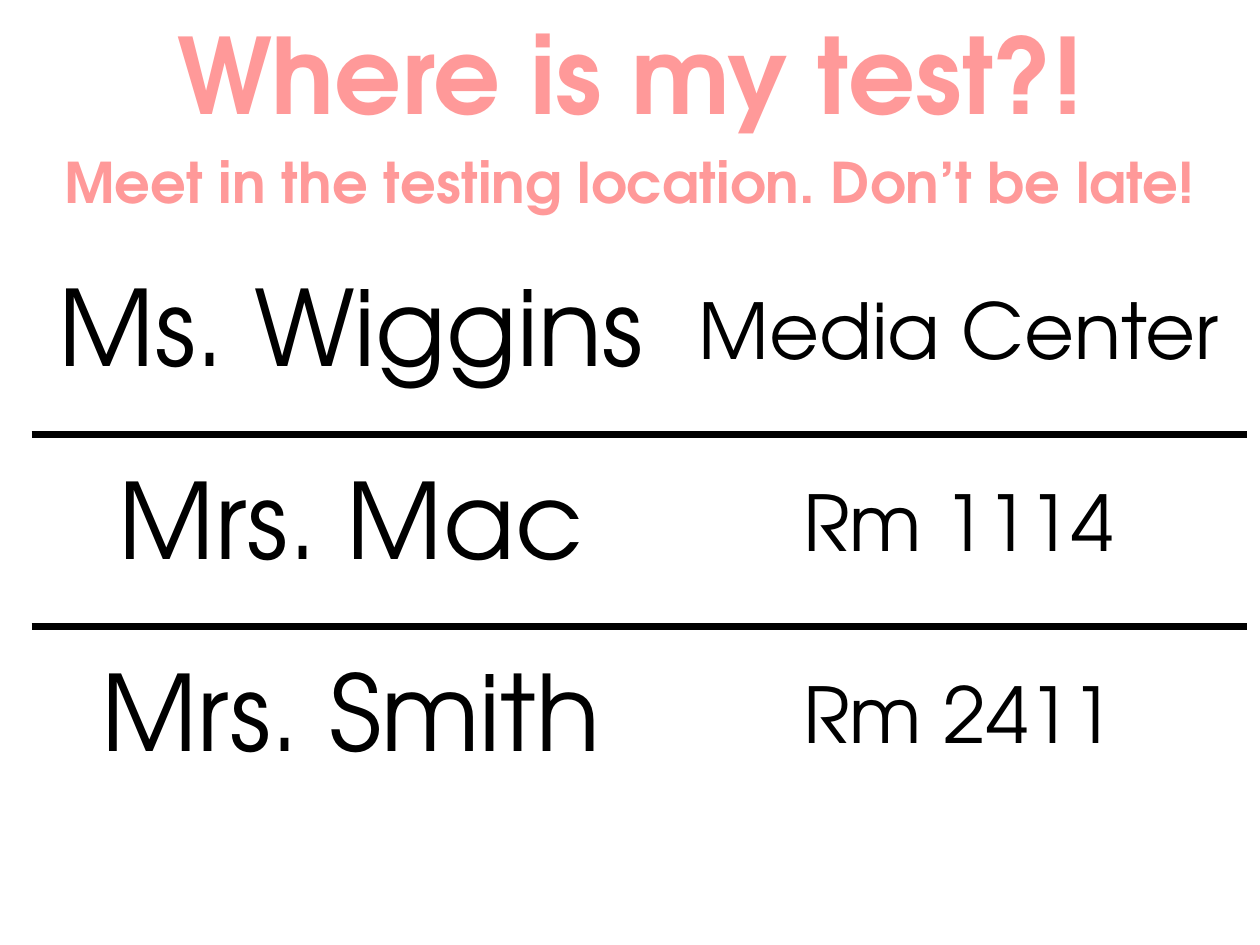
from lxml.etree import SubElement
from pptx import Presentation
from pptx.dml.color import RGBColor
from pptx.enum.text import MSO_ANCHOR, PP_ALIGN
from pptx.oxml.ns import qn
from pptx.util import Inches, Pt

FONT = "TeX Gyre Adventor"
PINK, BLACK, WHITE = "FF9999", "000000", "FFFFFF"
NO_TABLE_STYLE = "{2D5ABB26-0587-4C30-8999-92F81FD0307C}"


def color(hex_string):
    return RGBColor.from_string(hex_string)


class TestNotice:
    """Holds the deck, its current slide and the shared text style."""

    def __init__(self, width, height):
        self.deck = Presentation()
        self.deck.slide_width = Inches(width)
        self.deck.slide_height = Inches(height)
        self.page = self.deck.slides.add_slide(self.deck.slide_layouts[6])
        self.page.background.fill.solid()
        self.page.background.fill.fore_color.rgb = color(WHITE)

    def place(self, left, top, width, height):
        """Turn shares of the slide's size into lengths."""
        across, down = self.deck.slide_width, self.deck.slide_height
        return (round(left * across), round(top * down),
                round(width * across), round(height * down))

    def set_text(self, para, text, size, ink, bold=False):
        para.text = text
        para.alignment = PP_ALIGN.CENTER
        para.font.name = FONT
        para.font.size = Pt(size)
        para.font.bold = bold
        para.font.color.rgb = color(ink)

    def heading(self, lines, area):
        frame = self.page.shapes.add_textbox(*self.place(*area)).text_frame
        frame.word_wrap = True
        for index, (text, size) in enumerate(lines):
            para = frame.add_paragraph() if index else frame.paragraphs[0]
            self.set_text(para, text, size, PINK, bold=True)
            para.space_before = Pt(0.2 * size)

    def rule(self, cell, side, width=4.5):
        """Draw a cell border; side is lnT or lnB."""
        properties = cell._tc.get_or_add_tcPr()
        line = SubElement(properties, qn(f"a:{side}"), w=str(Pt(width)))
        fill = SubElement(line, qn("a:solidFill"))
        SubElement(fill, qn("a:srgbClr"), val=BLACK)
        properties.insert(0, line)

    def room_table(self, rows, area, shares, sizes):
        frame = self.page.shapes.add_table(len(rows), len(shares), *self.place(*area))
        table = frame.table
        table.first_row = table.horz_banding = False
        table._tbl.tblPr.find(qn("a:tableStyleId")).text = NO_TABLE_STYLE
        for column, share in zip(table.columns, shares):
            column.width = round(share * frame.width)
        for row_index, texts in enumerate(rows):
            for column_index, (text, size) in enumerate(zip(texts, sizes)):
                cell = table.cell(row_index, column_index)
                cell.vertical_anchor = MSO_ANCHOR.MIDDLE
                cell.fill.background()
                self.set_text(cell.text_frame.paragraphs[0], text, size, BLACK)
                if row_index < len(rows) - 1:
                    self.rule(cell, "lnB")
                if row_index > 0:
                    self.rule(cell, "lnT")


def main():
    notice = TestNotice(10, 7.5)
    notice.heading(
        [("Where is my test?!", 60),
         ("Meet in the testing location. Don’t be late!", 32)],
        area=(0, 0.03 / 7.5, 1, 0.7),
    )
    notice.room_table(
        [("Ms. Wiggins", "Media Center"),
         ("Mrs. Mac", "Rm 1114"),
         ("Mrs. Smith", "Rm 2411")],
        area=(0.025, 1.92 / 7.5, 0.95, 4.58 / 7.5),
        shares=(5.07 / 9.5, 4.43 / 9.5),
        sizes=(60, 44),
    )
    notice.deck.save("out.pptx")


if __name__ == "__main__":
    main()
